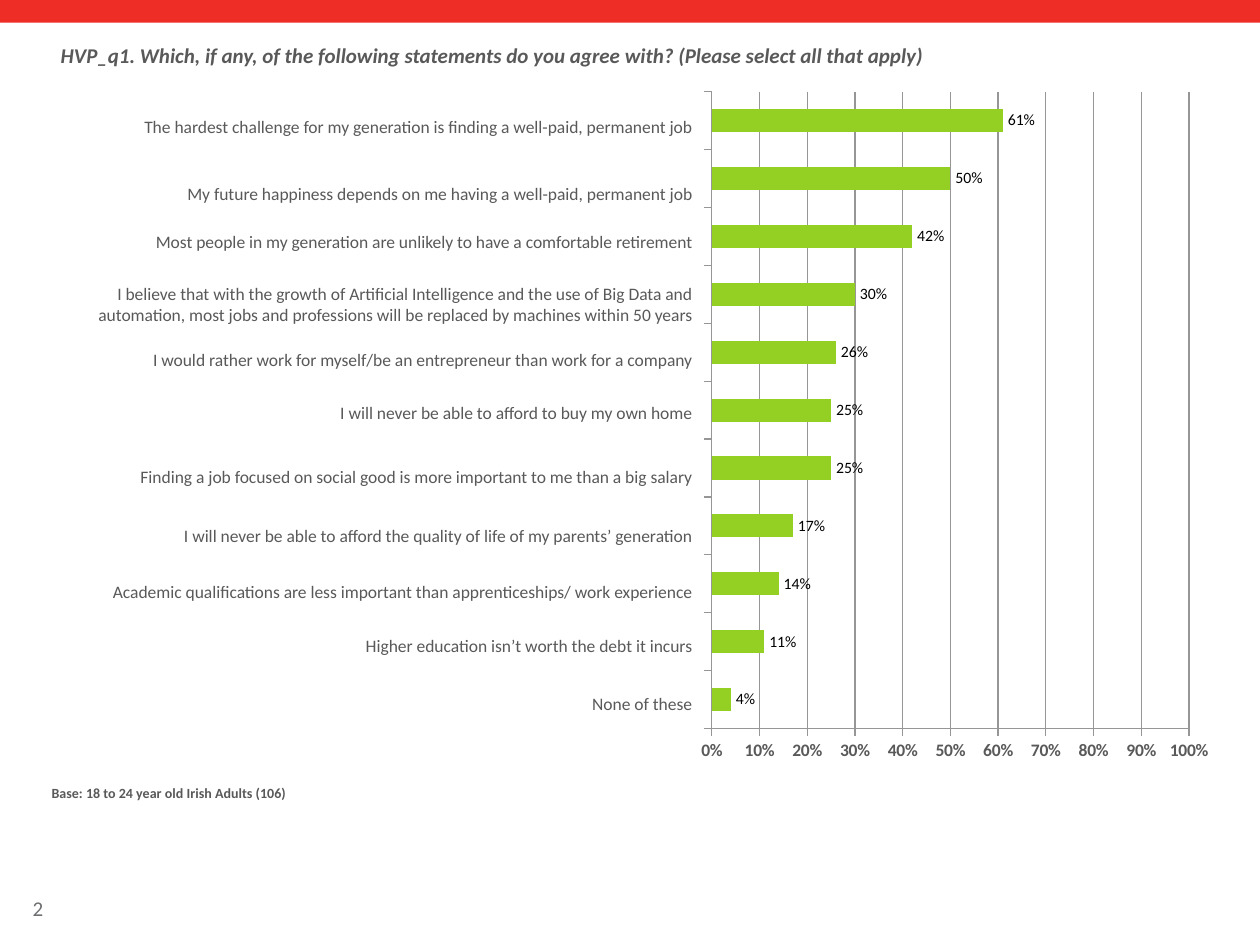
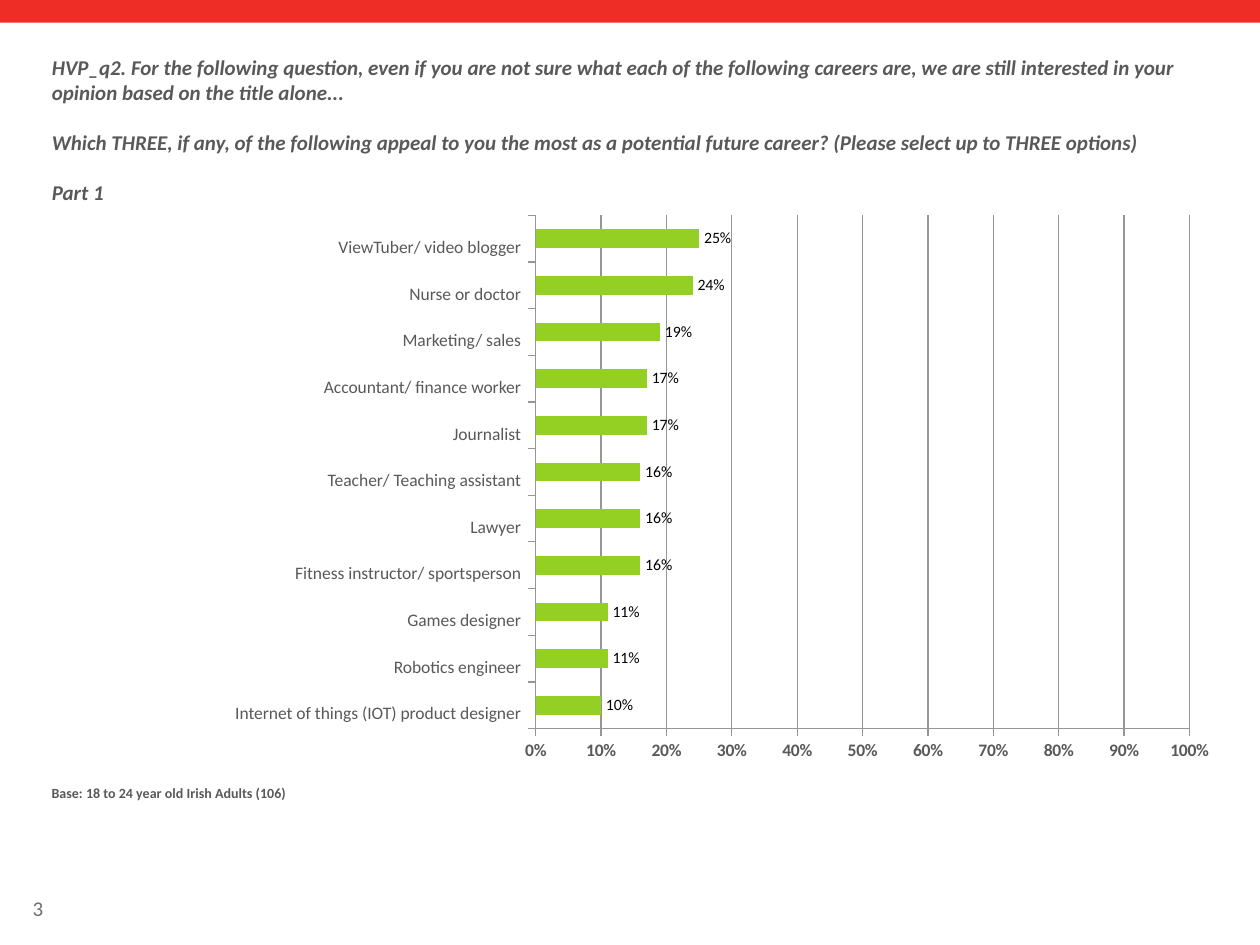
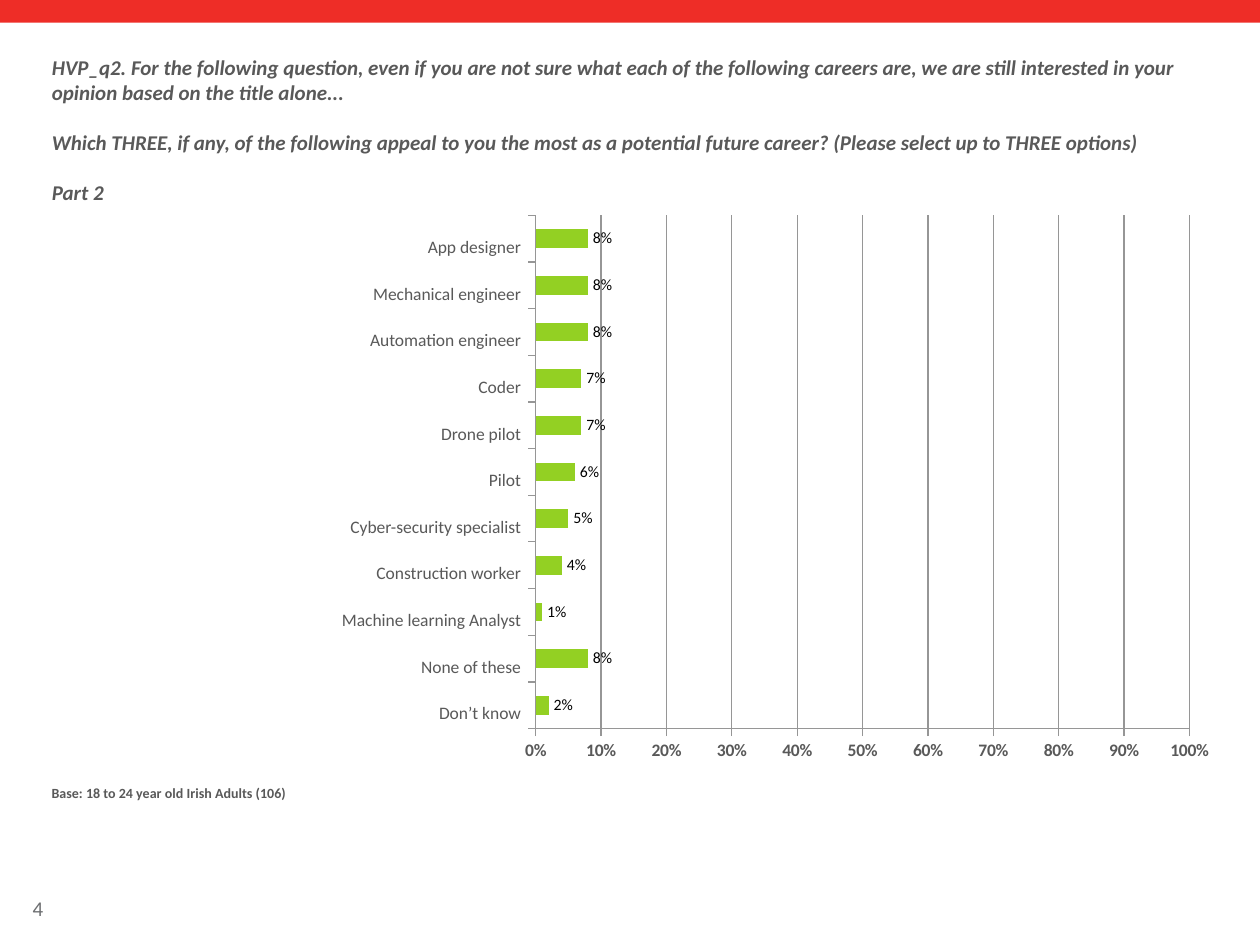
import pptx
import pptx.chart.data
import pptx.dml.color
import pptx.enum.chart
import pptx.enum.shapes
import pptx.enum.text
import pptx.util
from lxml import etree
from pptx.oxml.ns import qn

Cm, Pt = pptx.util.Cm, pptx.util.Pt
RGBColor = pptx.dml.color.RGBColor
ANCHOR = pptx.enum.text.MSO_ANCHOR
ALIGN = pptx.enum.text.PP_ALIGN
TICK = pptx.enum.chart.XL_TICK_MARK
TICK_LABEL = pptx.enum.chart.XL_TICK_LABEL_POSITION

# Shared colours and text styles
RED = RGBColor(0xEE, 0x2D, 0x27)
GREEN = RGBColor(0x93, 0xD0, 0x23)
DARK_GREY = RGBColor(0x59, 0x59, 0x59)
MID_GREY = RGBColor(0x6D, 0x6F, 0x71)
LINE_GREY = RGBColor(0x96, 0x96, 0x96)
BLACK = RGBColor(0, 0, 0)

QUESTION = {"name": "Calibri", "size": Pt(12), "bold": True, "italic": True}
STATEMENT = {"name": "Calibri", "size": Pt(10)}
AXIS = {"name": "Calibri", "size": Pt(10), "bold": True}
BASE_NOTE = {"name": "Calibri", "size": Pt(8), "bold": True}
PAGE_NUMBER = {"name": "Calibri", "size": Pt(12)}
BAR_VALUE = {"name": "Calibri", "size": Pt(9)}
CHART_TEXT = {"name": "Manrope", "size": Pt(18)}

# Boxes in cm: left, top, width, height
SLIDE_WIDTH, SLIDE_HEIGHT = 25.4, 19.05
BAND_BOX = (0, 0, SLIDE_WIDTH, 0.46)
PAGE_NUMBER_BOX = (0.41, 17.93, 1.96, 0.76)
BASE_BOX = (0.79, 15.7, 23.85, 1.09)
PLOT_MARGINS = (0.46, 0.25, 0.66, 0.91)  # left, top, right, bottom
FIRST_PAGE = 2

BASE = "Base: 18 to 24 year old Irish Adults (106)"
STATEMENT_QUESTION = [
    "HVP_q1. Which, if any, of the following statements do you agree with? "
    "(Please select all that apply)",
]
CAREER_QUESTION = [
    "HVP_q2. For the following question, even if you are not sure what each of the "
    "following careers are, we are still interested in your opinion based on the title alone...",
    "Which THREE, if any, of the following appeal to you the most as a potential future "
    "career? (Please select up to THREE options)",
]

# Statement, share, top and height of its label in cm
STATEMENTS = [
    ("The hardest challenge for my generation is finding a well-paid, permanent job",
     0.61, 2.21, 0.69),
    ("My future happiness depends on me having a well-paid, permanent job", 0.5, 3.56, 0.69),
    ("Most people in my generation are unlikely to have a comfortable retirement",
     0.42, 4.52, 0.69),
    ("I believe that with the growth of Artificial Intelligence and the use of Big Data and "
     "automation, most jobs and professions will be replaced by machines within 50 years",
     0.3, 5.56, 1.12),
    ("I would rather work for myself/be an entrepreneur than work for a company",
     0.26, 6.91, 0.69),
    ("I will never be able to afford to buy my own home", 0.25, 7.98, 0.69),
    ("Finding a job focused on social good is more important to me than a big salary",
     0.25, 9.27, 0.69),
    ("I will never be able to afford the quality of life of my parents’ generation",
     0.17, 10.46, 0.69),
    ("Academic qualifications are less important than apprenticeships/ work experience",
     0.14, 11.58, 0.69),
    ("Higher education isn’t worth the debt it incurs", 0.11, 12.67, 0.69),
    ("None of these", 0.04, 13.84, 0.69),
]
CAREERS = {
    "Part 1": [
        ("ViewTuber/ video blogger", 0.25),
        ("Nurse or doctor", 0.24),
        ("Marketing/ sales", 0.19),
        ("Accountant/ finance worker", 0.17),
        ("Journalist", 0.17),
        ("Teacher/ Teaching assistant", 0.16),
        ("Lawyer", 0.16),
        ("Fitness instructor/ sportsperson", 0.16),
        ("Games designer", 0.11),
        ("Robotics engineer", 0.11),
        ("Internet of things (IOT) product designer", 0.1),
    ],
    "Part 2": [
        ("App designer", 0.08),
        ("Mechanical engineer", 0.08),
        ("Automation engineer", 0.08),
        ("Coder", 0.07),
        ("Drone pilot", 0.07),
        ("Pilot", 0.06),
        ("Cyber-security specialist", 0.05),
        ("Construction worker", 0.04),
        ("Machine learning Analyst", 0.01),
        ("None of these", 0.08),
        ("Don’t know", 0.02),
    ],
}


def in_cm(box):
    return [Cm(length) for length in box]


def set_values(target, values):
    for name, value in values.items():
        setattr(target, name, value)


def style_font(font, style, color):
    set_values(font, style)
    font.color.rgb = color


def add_text(slide, box, text, style, color, anchor=ANCHOR.TOP, align=ALIGN.LEFT):
    frame = slide.shapes.add_textbox(*in_cm(box)).text_frame
    set_values(frame, {"word_wrap": True, "vertical_anchor": anchor})
    paragraph = frame.paragraphs[0]
    paragraph.text = text
    paragraph.alignment = align
    style_font(paragraph.font, style, color)
    return paragraph


def add_band(slide, box):
    band = slide.shapes.add_shape(pptx.enum.shapes.MSO_SHAPE.RECTANGLE, *in_cm(box))
    band.shadow.inherit = False
    band.fill.solid()
    band.fill.fore_color.rgb = RED
    band.line.fill.background()


def add_page_number(slide, box, number):
    paragraph = add_text(slide, box, str(number), PAGE_NUMBER, MID_GREY, ANCHOR.MIDDLE)
    # Turn the run into a slide number field
    run = paragraph.runs[0]
    style_font(run.font, PAGE_NUMBER, MID_GREY)
    field = run._r
    number_field = etree.SubElement(paragraph._p, qn("a:fld"), {
        "id": "{B6F15528-21DE-4FAA-801E-634DDDAF4B2B}", "type": "slidenum"})
    number_field.extend(list(field))
    paragraph._p.replace(field, number_field)


def add_question(slide, box, lines):
    title = slide.shapes.title
    set_values(title, dict(zip(("left", "top", "width", "height"), in_cm(box))))
    frame = title.text_frame
    frame.text = "\n".join(lines)
    set_values(frame, {"word_wrap": True, "vertical_anchor": ANCHOR.TOP,
                       "auto_size": pptx.enum.text.MSO_AUTO_SIZE.NONE})
    for index, paragraph in enumerate(frame.paragraphs):
        paragraph.alignment = ALIGN.LEFT
        paragraph.space_before = Pt(14 if index else 0)
        style_font(paragraph.font, QUESTION, DARK_GREY)


def fix_plot_area(chart, box):
    """Keep the bars inside fixed margins of the chart box."""
    left, top, right, bottom = PLOT_MARGINS
    width, height = box[2:]
    plot_area = chart._chartSpace.chart.plotArea
    for old_layout in plot_area.findall(qn("c:layout")):
        plot_area.remove(old_layout)
    layout = etree.Element(qn("c:layout"))
    manual = etree.SubElement(layout, qn("c:manualLayout"))
    for tag, value in {
        "layoutTarget": "inner", "xMode": "edge", "yMode": "edge",
        "x": left / width, "y": top / height,
        "w": (width - left - right) / width, "h": (height - top - bottom) / height,
    }.items():
        etree.SubElement(manual, qn(f"c:{tag}"), val=str(value))
    plot_area.insert(0, layout)


def add_share_chart(slide, box, shares):
    # Bars run upwards, so the last share comes first
    chart_data = pptx.chart.data.CategoryChartData(number_format="0%")
    chart_data.categories = [str(n) for n in range(1, len(shares) + 1)]
    chart_data.add_series("Series 1", shares[::-1])
    chart = slide.shapes.add_chart(pptx.enum.chart.XL_CHART_TYPE.BAR_CLUSTERED,
                                   *in_cm(box), chart_data).chart
    set_values(chart, {"has_legend": False, "has_title": False})
    style_font(chart.font, CHART_TEXT, MID_GREY)

    plot = chart.plots[0]
    set_values(plot, {"gap_width": 150, "overlap": -10,
                      "vary_by_categories": False, "has_data_labels": True})
    bars = plot.series[0].format.fill
    bars.solid()
    bars.fore_color.rgb = GREEN
    set_values(plot.data_labels, {
        "show_value": True, "number_format": "0%", "number_format_is_linked": False,
        "position": pptx.enum.chart.XL_LABEL_POSITION.OUTSIDE_END})
    style_font(plot.data_labels.font, BAR_VALUE, BLACK)

    statement_axis, share_axis = chart.category_axis, chart.value_axis
    set_values(statement_axis, {"tick_label_position": TICK_LABEL.NONE,
                                "has_major_gridlines": False})
    style_font(statement_axis.tick_labels.font, STATEMENT, DARK_GREY)
    set_values(share_axis, {"minimum_scale": 0, "maximum_scale": 1, "major_unit": 0.1,
                            "has_major_gridlines": True,
                            "tick_label_position": TICK_LABEL.LOW})
    set_values(share_axis.tick_labels, {"number_format": "0%",
                                        "number_format_is_linked": False})
    style_font(share_axis.tick_labels.font, AXIS, DARK_GREY)
    for axis in (statement_axis, share_axis):
        set_values(axis, {"major_tick_mark": TICK.OUTSIDE, "minor_tick_mark": TICK.NONE})
    for lined in (statement_axis, share_axis, share_axis.major_gridlines):
        lined.format.line.color.rgb = LINE_GREY
        lined.format.line.width = Pt(0.75)
    fix_plot_area(chart, box)


def add_row_label(slide, box, label):
    add_text(slide, box, label, STATEMENT, DARK_GREY, ANCHOR.MIDDLE, ALIGN.RIGHT)


def add_survey_slide(deck, question_box, question, chart_box, shares):
    """Add a slide with the parts that every survey question shares."""
    slide = deck.slides.add_slide(deck.slide_layouts.get_by_name("Title Only"))
    add_band(slide, BAND_BOX)
    add_page_number(slide, PAGE_NUMBER_BOX, FIRST_PAGE + len(deck.slides) - 1)
    add_question(slide, question_box, question)
    add_share_chart(slide, chart_box, shares)
    add_text(slide, BASE_BOX, BASE, BASE_NOTE, DARK_GREY)
    return slide


def add_statement_slide(deck):
    slide = add_survey_slide(deck, (0.97, 0.74, 23.85, 1.3), STATEMENT_QUESTION,
                             (13.89, 1.6, 10.74, 14), [row[1] for row in STATEMENTS])
    for statement, _, top, height in STATEMENTS:
        add_row_label(slide, (0.69, top, 13.51, height), statement)


def add_career_slide(deck, part, careers):
    slide = add_survey_slide(deck, (0.79, 0.97, 23.85, 3.15), CAREER_QUESTION + [part],
                             (10.34, 4.09, 14.3, 11.51), [share for _, share in careers])
    first_top, row_height = 4.5, 0.94
    for row, (career, _) in enumerate(careers):
        add_row_label(slide, (0.41, first_top + row * row_height, 10.34, row_height), career)


def main():
    deck = pptx.Presentation()
    set_values(deck, {"slide_width": Cm(SLIDE_WIDTH), "slide_height": Cm(SLIDE_HEIGHT)})
    deck.element.set("firstSlideNum", str(FIRST_PAGE))
    add_statement_slide(deck)
    for part, careers in CAREERS.items():
        add_career_slide(deck, part, careers)
    deck.save("out.pptx")


if __name__ == "__main__":
    main()
